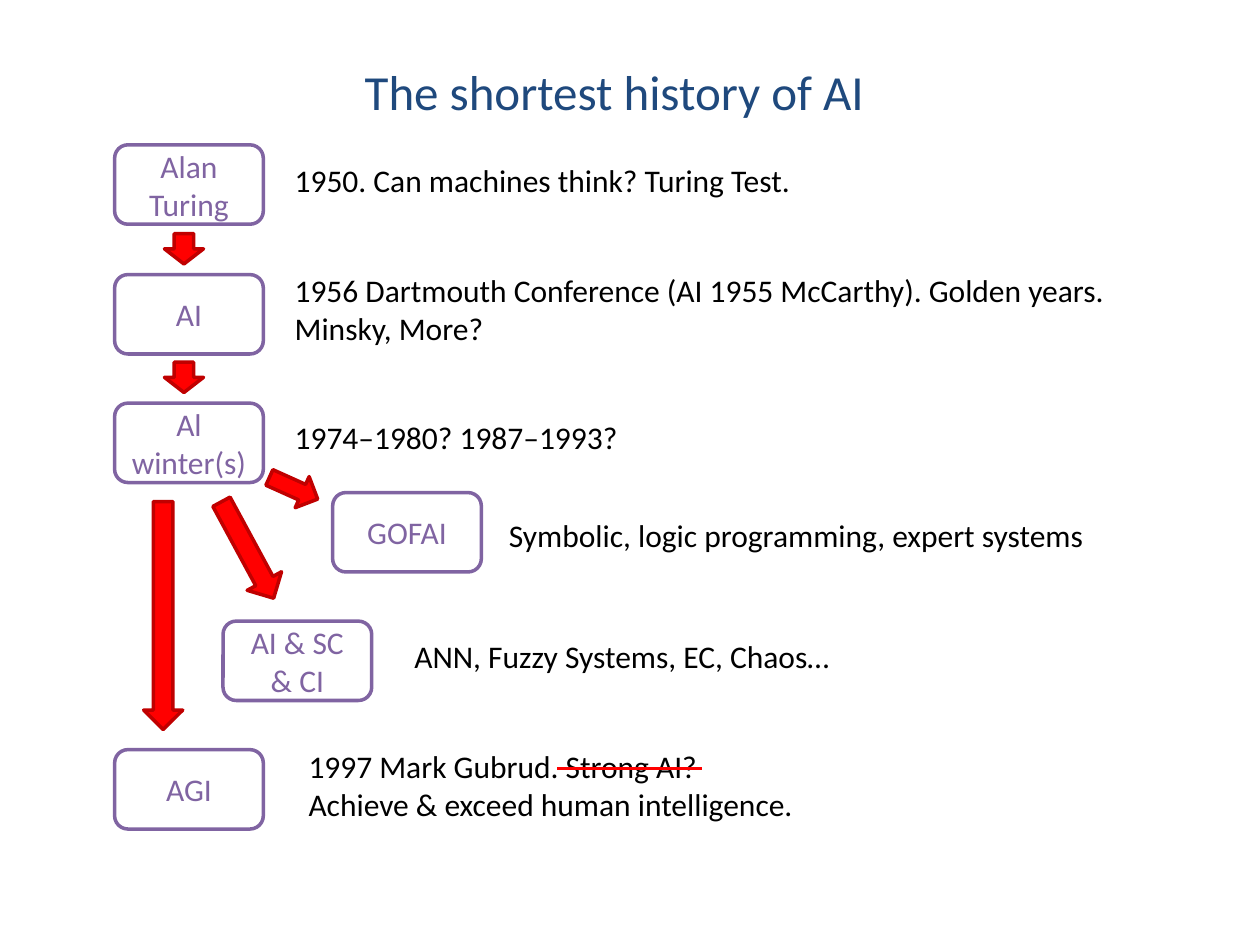
from pptx import Presentation
from pptx.dml.color import RGBColor
from pptx.enum import shapes, text
from pptx.util import Inches, Pt

NAVY = RGBColor(0x1F, 0x49, 0x7D)
PURPLE = RGBColor(0x80, 0x64, 0xA2)
RED = RGBColor(0xFF, 0x00, 0x00)
DARK_RED = RGBColor(0xC0, 0x00, 0x00)
WHITE = RGBColor(0xFF, 0xFF, 0xFF)
BLACK = RGBColor(0x00, 0x00, 0x00)

FONT = "Calibri"
STAGE_SIZE = (1.18, 0.63)
MAIN_LEFT = 0.91
NOTE_LEFT = 2.24

# label, left, top
STAGES = [
    ("Alan Turing", MAIN_LEFT, 1.15),
    ("AI", MAIN_LEFT, 2.18),
    ("Al winter(s)", MAIN_LEFT, 3.2),
    ("GOFAI", 2.64, 3.91),
    ("AI & SC & CI", 1.77, 4.93),
    ("AGI", MAIN_LEFT, 5.95),
]

# wording, left, top, width, height
NOTES = [
    ("1950. Can machines think? Turing Test.", NOTE_LEFT, 1.23, 4.18, 0.4),
    ("1956 Dartmouth Conference (AI 1955 McCarthy). Golden years.\nMinsky, More?",
     NOTE_LEFT, 2.1, 6.77, 0.71),
    ("1974–1980? 1987–1993?", NOTE_LEFT, 3.27, 2.79, 0.4),
    ("Symbolic, logic programming, expert systems", 3.94, 4.05, 4.86, 0.4),
    ("ANN, Fuzzy Systems, EC, Chaos…", 3.19, 5.01, 3.59, 0.4),
    ("1997 Mark Gubrud. Strong AI?\nAchieve & exceed human intelligence.",
     2.35, 5.88, 4.09, 0.71),
]

# left, top, width, height before turning, then the turn in degrees
ARROWS = [
    (1.34, 1.82, 0.24, 0.31, 270),
    (1.34, 2.84, 0.24, 0.31, 270),
    (2.12, 3.74, 0.42, 0.27, 204.2),
    (1.53, 4.21, 0.87, 0.31, 241.6),
    (0.39, 4.73, 1.81, 0.31, 270),
]


def write(frame, wording, size, color, align):
    """Fill the frame with one paragraph; a newline becomes a line break."""
    paragraph = frame.paragraphs[0]
    paragraph.text = wording
    paragraph.alignment = align
    for run in paragraph.runs:
        run.font.name = FONT
        run.font.size = Pt(size)
        run.font.color.rgb = color


def add_title(slide, wording):
    title = slide.shapes.title
    title.left, title.top = Inches(2.77), Inches(0.44)
    title.width, title.height = Inches(4.21), Inches(0.57)
    frame = title.text_frame
    frame.word_wrap = False
    frame.vertical_anchor = text.MSO_ANCHOR.TOP
    write(frame, wording, 28, NAVY, text.PP_ALIGN.CENTER)


def add_filled_shape(slide, preset, box, fill, line=None):
    shape = slide.shapes.add_shape(preset, *map(Inches, box))
    shape.shadow.inherit = False
    shape.fill.solid()
    shape.fill.fore_color.rgb = fill
    if line is None:
        shape.line.fill.background()
    else:
        shape.line.color.rgb = line
        shape.line.width = Pt(2)
    return shape


def add_stage(slide, label, left, top):
    stage = add_filled_shape(slide, shapes.MSO_SHAPE.ROUNDED_RECTANGLE,
                             (left, top, *STAGE_SIZE), WHITE, PURPLE)
    stage.text_frame.vertical_anchor = text.MSO_ANCHOR.MIDDLE
    write(stage.text_frame, label, 18, PURPLE, text.PP_ALIGN.CENTER)


def add_note(slide, wording, *box):
    frame = slide.shapes.add_textbox(*map(Inches, box)).text_frame
    frame.word_wrap = False
    frame.auto_size = text.MSO_AUTO_SIZE.SHAPE_TO_FIT_TEXT
    write(frame, wording, 18, BLACK, text.PP_ALIGN.LEFT)


def add_arrow(slide, *box, turn):
    arrow = add_filled_shape(slide, shapes.MSO_SHAPE.LEFT_ARROW, box, RED, DARK_RED)
    arrow.rotation = turn


def add_strike(slide, *box):
    """Cross out a phrase with a thin minus sign."""
    strike = add_filled_shape(slide, shapes.MSO_SHAPE.MATH_MINUS, box, RED)
    strike.adjustments[0] = 0.36


def main():
    deck = Presentation()
    deck.slide_width, deck.slide_height = Inches(10), Inches(7.5)
    slide = deck.slides.add_slide(deck.slide_layouts.get_by_name("Title Only"))

    add_title(slide, "The shortest history of AI")
    for stage in STAGES:
        add_stage(slide, *stage)
    for note in NOTES:
        add_note(slide, *note)
    for *box, turn in ARROWS:
        add_arrow(slide, *box, turn=turn)
    add_strike(slide, 4.21, 6.06, 1.57, 0.08)

    deck.save("out.pptx")


if __name__ == "__main__":
    main()
